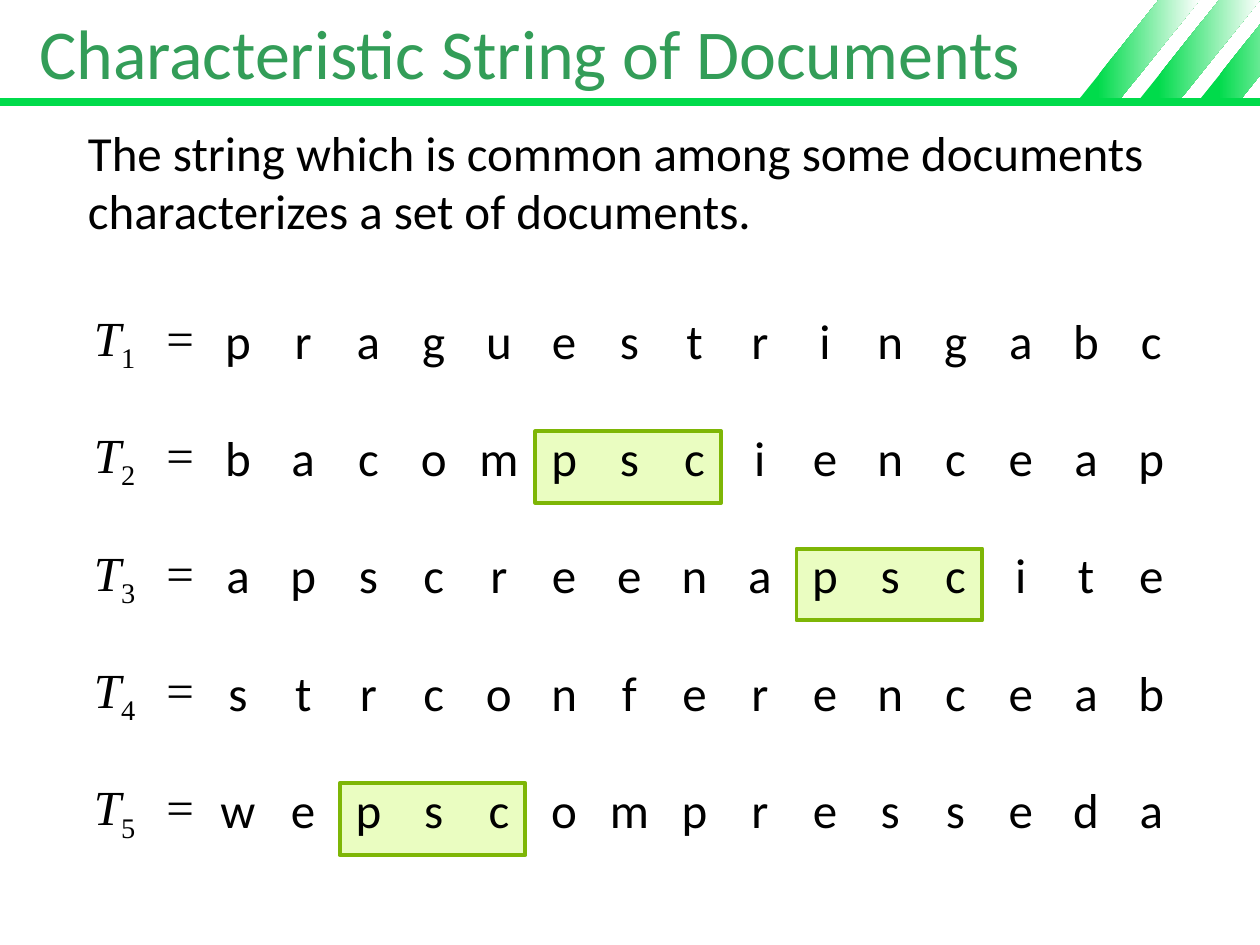
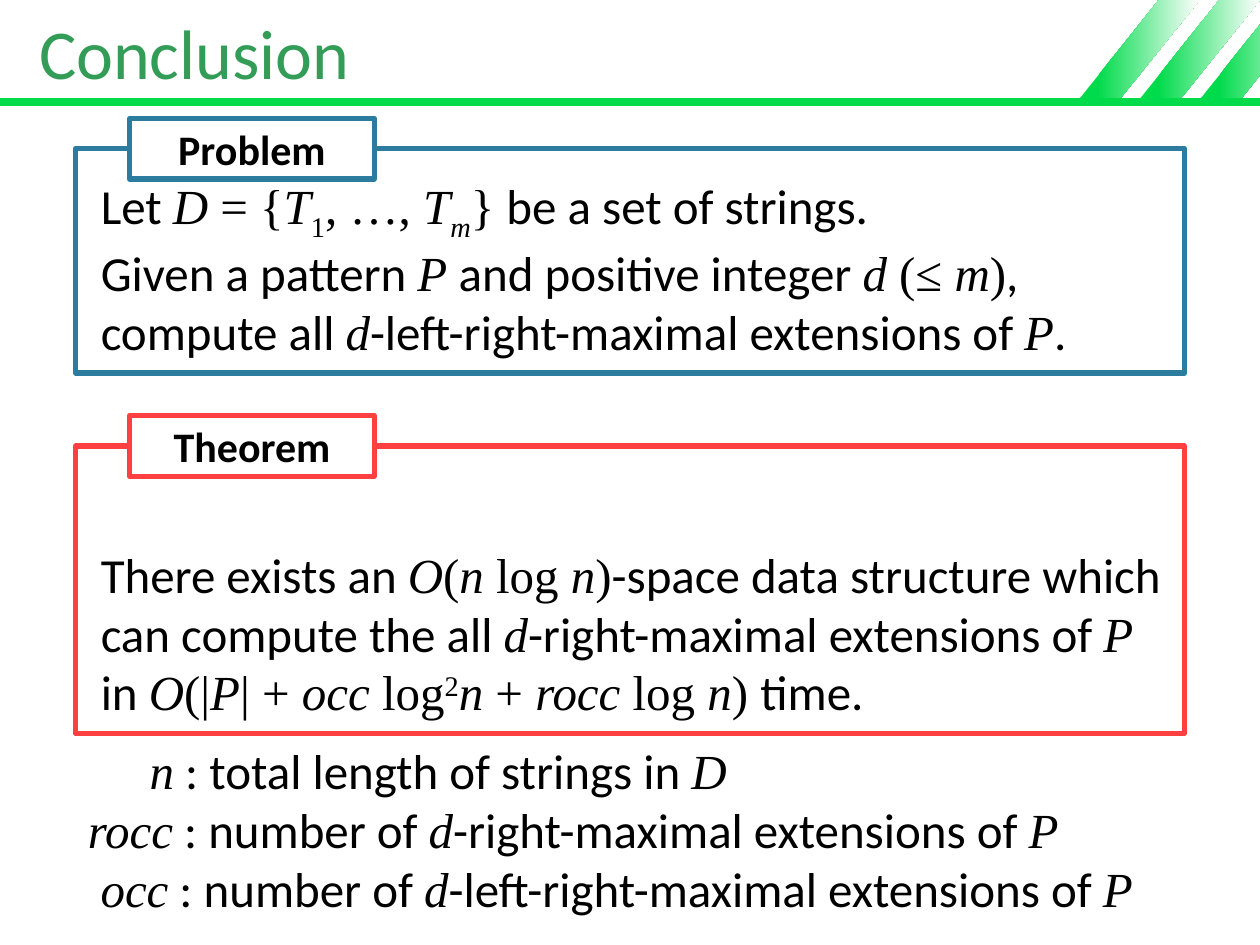
from lxml import etree
from pptx import Presentation
from pptx.dml.color import RGBColor
from pptx.enum.shapes import MSO_CONNECTOR, MSO_SHAPE
from pptx.enum.text import MSO_ANCHOR, PP_ALIGN
from pptx.oxml.ns import qn
from pptx.util import Inches, Pt

PARALLELOGRAM, RECT = MSO_SHAPE.PARALLELOGRAM, MSO_SHAPE.RECTANGLE
STRAIGHT = MSO_CONNECTOR.STRAIGHT
LEFT, CENTER = PP_ALIGN.LEFT, PP_ALIGN.CENTER
TOP, MIDDLE, BOTTOM = MSO_ANCHOR.TOP, MSO_ANCHOR.MIDDLE, MSO_ANCHOR.BOTTOM

BLACK = RGBColor(0x00, 0x00, 0x00)
WHITE = RGBColor(0xFF, 0xFF, 0xFF)
BAND_GREEN = RGBColor(0x00, 0xDB, 0x4B)
TITLE_GREEN = RGBColor(0x33, 0x9D, 0x58)
MATCH_FILL = RGBColor(0xEA, 0xFD, 0xC1)
MATCH_LINE = RGBColor(0x7E, 0xB6, 0x06)
PROBLEM_BLUE = RGBColor(0x2C, 0x7C, 0x9F)
THEOREM_RED = RGBColor(0xFF, 0x40, 0x40)

SANS, SERIF = "Calibri", "Times New Roman"
NO_TABLE_STYLE = "{2D5ABB26-0587-4C30-8999-92F81FD0307C}"

# Run styles: font, italic, baseline in thousandths of a percent
STYLES = {
    "text": (SANS, False, 0),
    "math": (SERIF, False, 0),
    "var": (SERIF, True, 0),
    "sub": (SERIF, False, -25000),
    "varsub": (SERIF, True, -25000),
    "sup": (SERIF, False, 30000),
}

MARGIN, CONTENT_W = 0.6, 8.8

DOCUMENTS = ["praguestringabc", "bacompscienceap", "apscreenapscite",
             "strconferenceab", "wepscompresseda"]
COMMON = "psc"

PROBLEM = [
    ("Let ", "text"), ("D ", "var"), ("= {", "math"), ("T", "var"),
    ("1", "sub"), (", …, ", "math"), ("T", "var"), ("m", "varsub"),
    ("} ", "math"), ("be a set of strings.\nGiven a pattern ", "text"),
    ("P ", "var"), ("and positive integer ", "text"), ("d", "var"),
    (" (≤ ", "math"), ("m", "var"), (")", "math"),
    (",\ncompute all ", "text"), ("d", "var"),
    ("-left-right-maximal extensions of ", "text"), ("P", "var"), (".", "text"),
]
THEOREM = [
    ("There exists an ", "text"), ("O", "var"), ("(", "math"), ("n", "var"),
    (" log ", "math"), ("n", "var"), (")", "math"),
    ("-space data structure which can compute the all ", "text"), ("d", "var"),
    ("-right-maximal extensions of ", "text"), ("P", "var"), (" in ", "text"),
    ("O", "var"), ("(|", "math"), ("P", "var"), ("| + ", "math"),
    ("occ", "var"), (" log", "math"), ("2", "sup"), ("n", "var"),
    (" + ", "math"), ("rocc", "var"), (" log ", "math"), ("n", "var"),
    (") ", "math"), ("time.", "text"),
]
# Symbol, indent in inches, meaning
LEGEND = [
    ("n", 0.49, [(" : total length of strings in ", "text"), ("D", "var")]),
    ("rocc", 0, [(" : number of ", "text"), ("d", "var"),
                 ("-right-maximal extensions of ", "text"), ("P", "var")]),
    ("occ", 0.1, [(" : number of ", "text"), ("d", "var"),
                  ("-left-right-maximal extensions of ", "text"), ("P", "var")]),
]


def write(p, text, size=28, color=BLACK, bold=False, align=LEFT, style="text"):
    """Fill a paragraph with a string or a list of (text, style) pieces."""
    p.alignment = align
    pieces = [(text, style)] if isinstance(text, str) else text
    for piece, name in pieces:
        font, italic, baseline = STYLES[name]
        for i, line in enumerate(piece.split("\n")):
            if i:
                p.add_line_break()
            r = p.add_run()
            r.text = line
            r.font.name, r.font.size = font, Pt(size)
            r.font.bold, r.font.italic = bold, italic
            r.font.color.rgb = color
            if baseline:
                r.font._element.set("baseline", str(baseline))


def add_box(shapes, x, y, w, h, line, fill=None, width=3.0):
    sp = shapes.add_shape(RECT, Inches(x), Inches(y), Inches(w), Inches(h))
    sp.shadow.inherit = False
    sp.line.color.rgb, sp.line.width = line, Pt(width)
    if fill is None:
        sp.fill.background()
    else:
        sp.fill.solid()
        sp.fill.fore_color.rgb = fill
    return sp


def add_text_area(s, x, y, w, h):
    tf = s.shapes.add_textbox(Inches(x), Inches(y), Inches(w), Inches(h)).text_frame
    tf.word_wrap = True
    tf.vertical_anchor = TOP
    return tf


def add_header(s, title, height=0.81):
    # Slanted stripes in the right corner
    for i in range(3):
        sp = s.shapes.add_shape(PARALLELOGRAM, Inches(9.53 - 0.48 * i), 0,
                                Inches(0.95), Inches(0.78))
        sp.adjustments[0] = 0.804
        sp.shadow.inherit = False
        sp.line.fill.background()
        sp.fill.gradient()
        sp.fill.gradient_angle = 0
        stops = zip(sp.fill.gradient_stops, (0.15, 1.0), (BAND_GREEN, WHITE))
        for stop, position, color in stops:
            stop.position, stop.color.rgb = position, color

    # Rule under the title
    rule = s.shapes.add_connector(STRAIGHT, 0, Inches(height), Inches(10), Inches(height))
    rule.line.color.rgb, rule.line.width = BAND_GREEN, Pt(4.5)
    etree.SubElement(rule.element.spPr, qn("a:effectLst"))

    # Title
    sp = s.shapes.title
    sp.left, sp.top = Inches(0.21), 0
    sp.width, sp.height = Inches(CONTENT_W), Inches(height)
    sp.text_frame.vertical_anchor = MIDDLE
    write(sp.text_frame.paragraphs[0], title, size=40, color=TITLE_GREEN)


def add_document_row(s, number, letters, x, y, w, h=0.57):
    label_w, equals_w = 0.62, 0.41
    letter_w = (w - label_w - equals_w) / len(letters)

    # Highlight behind the common string
    start = letters.rfind(COMMON)
    if start >= 0:
        add_box(s.shapes, x + label_w + equals_w + start * letter_w + 0.03, y + 0.06,
                len(COMMON) * letter_w - 0.08, h, MATCH_LINE, MATCH_FILL, 2.25)

    # One letter per cell
    cells = [[("T", "var"), (str(number), "sub")], [("=", "math")], *letters]
    widths = [label_w, equals_w] + [letter_w] * len(letters)
    frame = s.shapes.add_table(1, len(cells), Inches(x), Inches(y), Inches(w), Inches(h))
    table = frame.table
    table.first_row = table.horz_banding = False
    for style_id in frame.element.iter(qn("a:tableStyleId")):
        style_id.text = NO_TABLE_STYLE
    for i, (text, width) in enumerate(zip(cells, widths)):
        table.columns[i].width = Inches(width)
        cell = table.cell(0, i)
        cell.fill.background()
        write(cell.text_frame.paragraphs[0], text, align=CENTER)


def add_statement(s, label, text, color, x, y, w, h):
    group = s.shapes.add_group_shape()
    # Framed statement
    tf = add_box(group.shapes, x, y, w, h, color).text_frame
    tf.word_wrap = True
    tf.vertical_anchor = BOTTOM
    tf.margin_left, tf.margin_right = Inches(0.2), Inches(0.16)
    tf.margin_top, tf.margin_bottom = Inches(0.05), Inches(0.1)
    write(tf.paragraphs[0], text)
    # Label across the top edge
    tf = add_box(group.shapes, x + 0.43, y - 0.24, 1.94, 0.48, color, WHITE).text_frame
    tf.vertical_anchor = MIDDLE
    write(tf.paragraphs[0], label, size=24, bold=True, align=CENTER)


def add_legend(s, x, y, w, h):
    tf = add_text_area(s, x, y, w, h)
    for i, (symbol, indent, meaning) in enumerate(LEGEND):
        p = tf.add_paragraph() if i else tf.paragraphs[0]
        write(p, [(symbol, "var"), *meaning])
        p._p.get_or_add_pPr().set("marL", str(Inches(indent)))


def new_slide(prs, title):
    s = prs.slides.add_slide(prs.slide_layouts[5])
    add_header(s, title)
    return s


def build_documents_slide(prs):
    s = new_slide(prs, "Characteristic String of Documents")
    tf = add_text_area(s, MARGIN, 0.92, CONTENT_W, 1.12)
    write(tf.paragraphs[0], "The string which is common among some documents\n"
                            "characterizes a set of documents.")
    for i, letters in enumerate(DOCUMENTS):
        add_document_row(s, i + 1, letters, MARGIN, 2.43 + 0.932 * i, CONTENT_W)


def build_conclusion_slide(prs):
    s = new_slide(prs, "Conclusion")
    add_statement(s, "Problem", PROBLEM, PROBLEM_BLUE, MARGIN, 1.18, CONTENT_W, 1.78)
    add_statement(s, "Theorem", THEOREM, THEOREM_RED, MARGIN, 3.54, CONTENT_W, 2.28)
    add_legend(s, MARGIN, 5.83, CONTENT_W, 1.59)


def main():
    prs = Presentation()
    prs.slide_width, prs.slide_height = Inches(10), Inches(7.5)
    build_documents_slide(prs)
    build_conclusion_slide(prs)
    prs.save("out.pptx")


if __name__ == "__main__":
    main()
